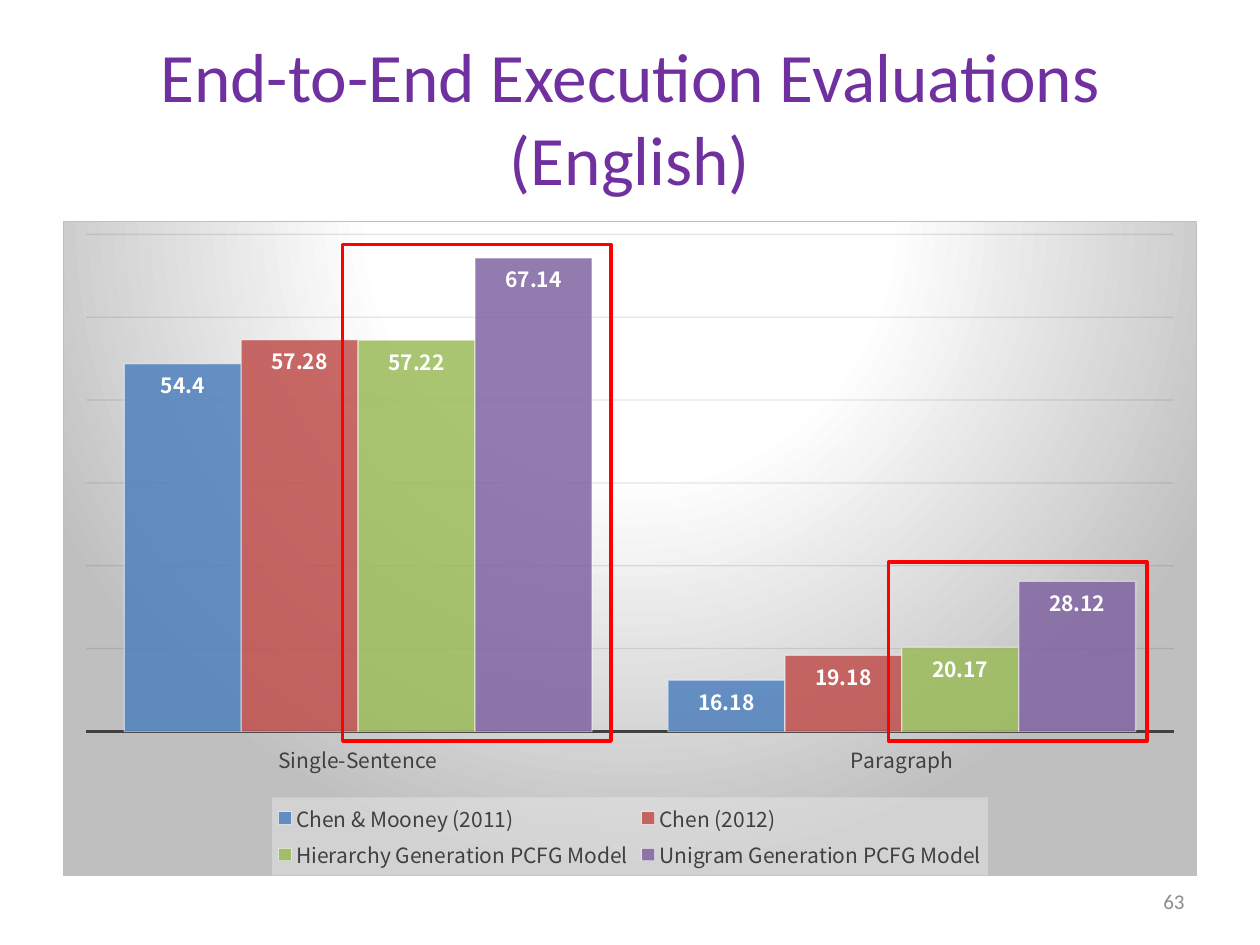
from lxml.etree import SubElement
from pptx import Presentation
from pptx.chart.data import CategoryChartData
from pptx.dml.color import RGBColor
from pptx.enum.chart import XL_CHART_TYPE, XL_LABEL_POSITION, XL_LEGEND_POSITION, XL_TICK_LABEL_POSITION, XL_TICK_MARK
from pptx.enum.shapes import MSO_SHAPE
from pptx.enum.text import MSO_ANCHOR, PP_ALIGN
from pptx.oxml import parse_xml
from pptx.oxml.ns import nsdecls, qn
from pptx.util import Cm, Pt

PURPLE = RGBColor(0x70, 0x30, 0xA0)
GRAY = RGBColor(0x8C, 0x8C, 0x8C)
DARK = RGBColor(0x40, 0x40, 0x40)
GRID = RGBColor(0x0D, 0x0D, 0x0D)
WHITE = RGBColor(0xFF, 0xFF, 0xFF)
RED = RGBColor(0xFF, 0x00, 0x00)
BLUE_BAR = RGBColor(0x4F, 0x81, 0xBD)
RED_BAR = RGBColor(0xC0, 0x50, 0x4D)
GREEN_BAR = RGBColor(0x9B, 0xBB, 0x59)
PURPLE_BAR = RGBColor(0x80, 0x64, 0xA2)

CATEGORIES = ["Single-Sentence", "Paragraph"]
RESULTS = [
    ("Chen & Mooney (2011)", (54.4, 16.18), BLUE_BAR),
    ("Chen (2012)", (57.28, 19.18), RED_BAR),
    ("Hierarchy Generation PCFG Model", (57.22, 20.17), GREEN_BAR),
    ("Unigram Generation PCFG Model", (67.14, 28.12), PURPLE_BAR),
]

CHART_BACKGROUND = f"""<c:spPr {nsdecls("c", "a")}>
  <a:gradFill rotWithShape="1"><a:gsLst>
    <a:gs pos="0"><a:srgbClr val="FFFFFF"/></a:gs>
    <a:gs pos="39000"><a:srgbClr val="FFFFFF"/></a:gs>
    <a:gs pos="100000"><a:srgbClr val="BFBFBF"/></a:gs>
  </a:gsLst><a:path path="circle">
    <a:fillToRect l="50000" t="-80000" r="50000" b="180000"/>
  </a:path></a:gradFill>
  <a:ln w="9525"><a:solidFill><a:srgbClr val="BFBFBF"/></a:solidFill></a:ln>
</c:spPr>"""
LEGEND_BACKGROUND = f"""<c:spPr {nsdecls("c", "a")}>
  <a:solidFill><a:srgbClr val="F2F2F2"><a:alpha val="39000"/></a:srgbClr></a:solidFill>
</c:spPr>"""


def set_opacity(element, percent):
    """Give every colour below the element the same opacity."""
    for color in element.iter(qn("a:srgbClr")):
        SubElement(color, qn("a:alpha")).set("val", str(percent * 1000))


class SlideBuilder:
    text_font = "Calibri"
    chart_font = "Noto Sans CJK KR"

    def __init__(self, page):
        self.page = page

    def style_font(self, font, name, size, color, bold=False):
        font.name, font.size, font.bold = name, Pt(size), bold
        font.color.rgb = color

    def text(self, lines, place, size, color, align):
        box = self.page.shapes.add_textbox(*map(Cm, place))
        frame = box.text_frame
        frame.word_wrap = True
        frame.vertical_anchor = MSO_ANCHOR.MIDDLE
        para = frame.paragraphs[0]
        para.alignment = align
        for index, line in enumerate(lines):
            if index:
                para.add_line_break()
            span = para.add_run()
            span.text = line
            self.style_font(span.font, self.text_font, size, color)

    def frame(self, place):
        box = self.page.shapes.add_shape(MSO_SHAPE.RECTANGLE, *map(Cm, place))
        box.shadow.inherit = False
        box.fill.background()
        box.line.color.rgb = RED
        box.line.width = Pt(2)

    def bar_chart(self, categories, results, place):
        data = CategoryChartData()
        data.categories = categories
        for name, values, _ in results:
            data.add_series(name, values)
        chart = self.page.shapes.add_chart(
            XL_CHART_TYPE.COLUMN_CLUSTERED, *map(Cm, place), data).chart
        chart.has_title = False
        self.style_font(chart.font, self.chart_font, 10, RGBColor(0, 0, 0))
        chart.element.find(qn("c:chart")).addnext(parse_xml(CHART_BACKGROUND))
        self.style_axes(chart)
        self.style_legend(chart)
        plot = chart.plots[0]
        plot.gap_width, plot.overlap = 65, 0
        plot.vary_by_categories = False
        for series, (_, _, color) in zip(plot.series, results):
            self.style_series(series, color)

    def style_axes(self, chart):
        axis = chart.category_axis
        axis.major_tick_mark = axis.minor_tick_mark = XL_TICK_MARK.NONE
        axis.tick_label_position = XL_TICK_LABEL_POSITION.LOW
        axis.format.line.color.rgb = DARK
        axis.format.line.width = Pt(1.5)
        self.style_font(axis.tick_labels.font, self.chart_font, 12, DARK)
        scale = chart.value_axis
        scale.minimum_scale, scale.maximum_scale, scale.major_unit = 10, 70, 10
        scale.visible = False
        scale.has_major_gridlines = True
        line = scale.major_gridlines.format.line
        line.color.rgb = GRID
        line.width = Pt(0.75)
        set_opacity(chart.element.find(".//" + qn("c:majorGridlines")), 10)

    def style_legend(self, chart):
        chart.has_legend = True
        legend = chart.legend
        legend.position = XL_LEGEND_POSITION.BOTTOM
        legend.include_in_layout = False
        self.style_font(legend.font, self.chart_font, 12, DARK)
        text_style = chart.element.find(".//" + qn("c:legend")).find(qn("c:txPr"))
        text_style.addprevious(parse_xml(LEGEND_BACKGROUND))

    def style_series(self, series, color):
        shape_format = series.format
        shape_format.fill.solid()
        shape_format.fill.fore_color.rgb = color
        shape_format.line.color.rgb = WHITE
        shape_format.line.width = Pt(0.75)
        properties = series._element.find(qn("c:spPr"))
        set_opacity(properties.find(qn("a:solidFill")), 85)
        set_opacity(properties.find(qn("a:ln")), 50)
        labels = series.data_labels
        labels.show_value = True
        labels.position = XL_LABEL_POSITION.INSIDE_END
        self.style_font(labels.font, self.chart_font, 12, WHITE, bold=True)


def main():
    deck = Presentation()
    deck.slide_width, deck.slide_height = Cm(25.4), Cm(19.05)
    builder = SlideBuilder(deck.slides.add_slide(deck.slide_layouts[6]))
    builder.text(["End-to-End Execution Evaluations", "(English)"],
                 (1.27, 0.76, 22.86, 3.18), 39.6, PURPLE, PP_ALIGN.CENTER)
    builder.bar_chart(CATEGORIES, RESULTS, (1.27, 4.45, 22.86, 13.21))
    builder.text(["63"], (18.21, 17.65, 5.92, 1.02), 12, GRAY, PP_ALIGN.RIGHT)
    builder.frame((6.91, 4.93, 5.41, 10.01))
    builder.frame((17.91, 11.33, 5.21, 3.61))
    deck.save("out.pptx")


if __name__ == "__main__":
    main()
